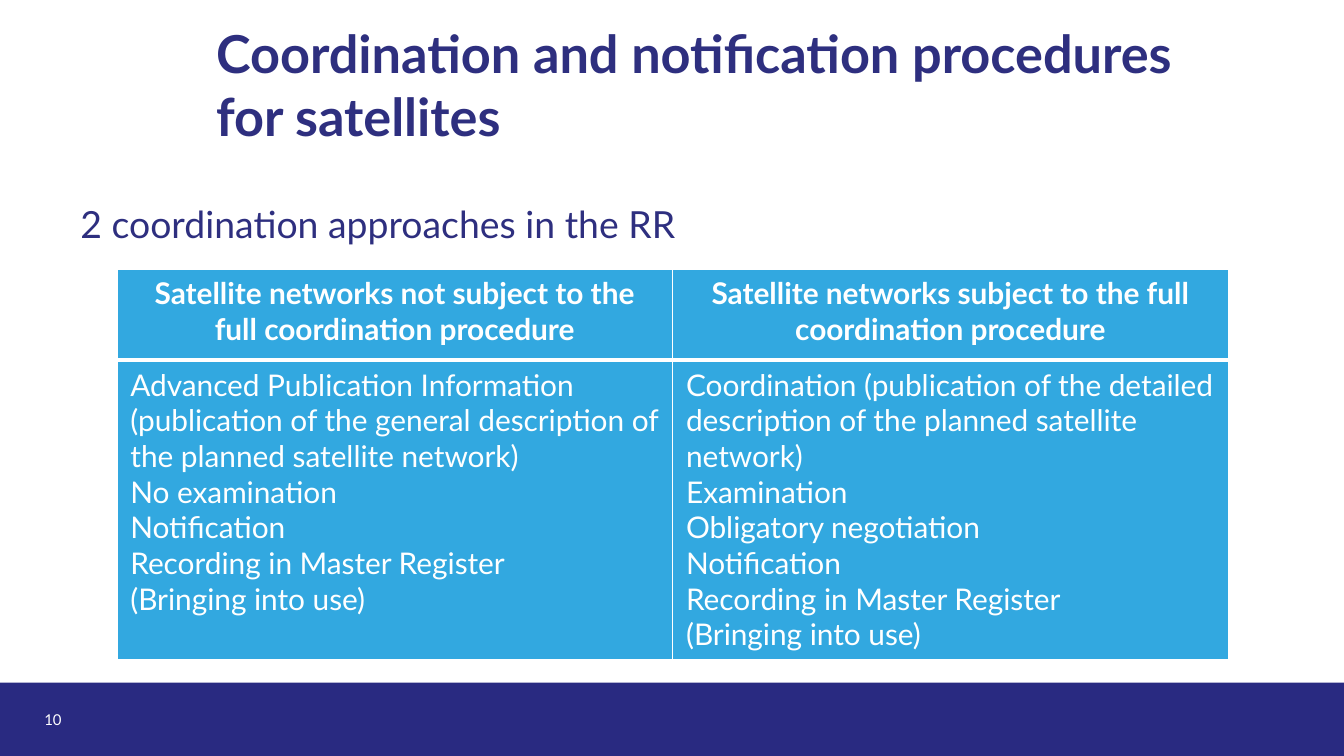
from dataclasses import dataclass

from lxml import etree
from pptx import Presentation
from pptx.dml.color import RGBColor
from pptx.enum import shapes, text
from pptx.oxml import ns
from pptx.util import Inches, Pt


@dataclass(frozen=True)
class Theme:
    font: str = "Lato"
    navy: str = "292A81"
    heading: str = "2E2F7F"
    sky: str = "32A8E0"
    white: str = "FFFFFF"
    title_size: int = 28
    lead_size: int = 20
    table_size: int = 16
    number_size: int = 8
    thin_rule: float = 1
    header_rule: float = 2.25


THEME = Theme()

APPROACHES = {
    "Satellite networks not subject to the full coordination procedure": [
        "Advanced Publication Information (publication of the general "
        "description of the planned satellite network)",
        "No examination",
        "Notification",
        "Recording in Master Register",
        "(Bringing into use)",
    ],
    "Satellite networks subject to the full coordination procedure": [
        "Coordination (publication of the detailed description of the "
        "planned satellite network)",
        "Examination",
        "Obligatory negotiation",
        "Notification",
        "Recording in Master Register",
        "(Bringing into use)",
    ],
}


def write(frame, lines, size, color, bold=False, align=text.PP_ALIGN.LEFT):
    """Fill a text frame with one paragraph per line, all in one style."""
    frame.word_wrap = True
    frame.text = "\n".join(lines)
    for para in frame.paragraphs:
        para.alignment = align
        para.font.name = THEME.font
        para.font.size = Pt(size)
        para.font.bold = bold
        para.font.color.rgb = RGBColor.from_string(color)


def add_text(page, box, line, size, color, bold=False):
    frame = page.shapes.add_textbox(*map(Inches, box)).text_frame
    write(frame, [line], size, color, bold)
    return frame


def set_borders(cell, **widths):
    """Draw white cell borders; sides are given as L, R, T, B in points."""
    props = cell._tc.get_or_add_tcPr()
    for index, side in enumerate("LRTB"):
        line = etree.Element(ns.qn(f"a:ln{side}"), w=str(Pt(widths.get(side, THEME.thin_rule))))
        fill = etree.SubElement(line, ns.qn("a:solidFill"))
        etree.SubElement(fill, ns.qn("a:srgbClr"), val=THEME.white)
        props.insert(index, line)


def add_footer(page, box, number):
    left, top, width, height = box
    band = page.shapes.add_shape(shapes.MSO_SHAPE.RECTANGLE, *map(Inches, box))
    band.shadow.inherit = False
    band.fill.solid()
    band.fill.fore_color.rgb = RGBColor.from_string(THEME.navy)
    band.line.fill.background()
    frame = add_text(page, (left + 0.33, top, 0.22, height), number,
                     THEME.number_size, THEME.white)
    frame.margin_left = frame.margin_right = frame.margin_top = frame.margin_bottom = 0
    frame.vertical_anchor = text.MSO_ANCHOR.MIDDLE


def add_comparison(page, box, approaches):
    """Place one column per approach: a heading above its steps."""
    left, top, width, height = box
    header_height = 0.68
    table = page.shapes.add_table(2, len(approaches), *map(Inches, box)).table
    table.rows[0].height = Inches(header_height)
    table.rows[1].height = Inches(height - header_height)
    for index, (heading, steps) in enumerate(approaches.items()):
        table.columns[index].width = Inches(width / len(approaches))
        header, body = table.cell(0, index), table.cell(1, index)
        for cell in (header, body):
            cell.fill.solid()
            cell.fill.fore_color.rgb = RGBColor.from_string(THEME.sky)
        write(header.text_frame, [heading], THEME.table_size, THEME.white,
              bold=True, align=text.PP_ALIGN.CENTER)
        write(body.text_frame, steps, THEME.table_size, THEME.white)
        set_borders(header, B=THEME.header_rule)
        set_borders(body, T=THEME.header_rule)


def main():
    deck = Presentation()
    deck.slide_width = Inches(10)
    deck.slide_height = deck.slide_width * 9 // 16
    page = deck.slides.add_slide(deck.slide_layouts[6])
    add_footer(page, (0, 5.08, 10, 0.55), "10")
    add_text(page, (1.51, 0.11, 7.32, 1.72),
             "Coordination and notification procedures for satellites",
             THEME.title_size, THEME.heading, bold=True)
    add_comparison(page, (0.87, 2, 8.27, 2.91), APPROACHES)
    lead = add_text(page, (0.5, 1.45, 9, 0.55), "2 coordination approaches in the RR",
                    THEME.lead_size, THEME.heading)
    lead.paragraphs[0].space_after = Pt(4)
    deck.save("out.pptx")


if __name__ == "__main__":
    main()
